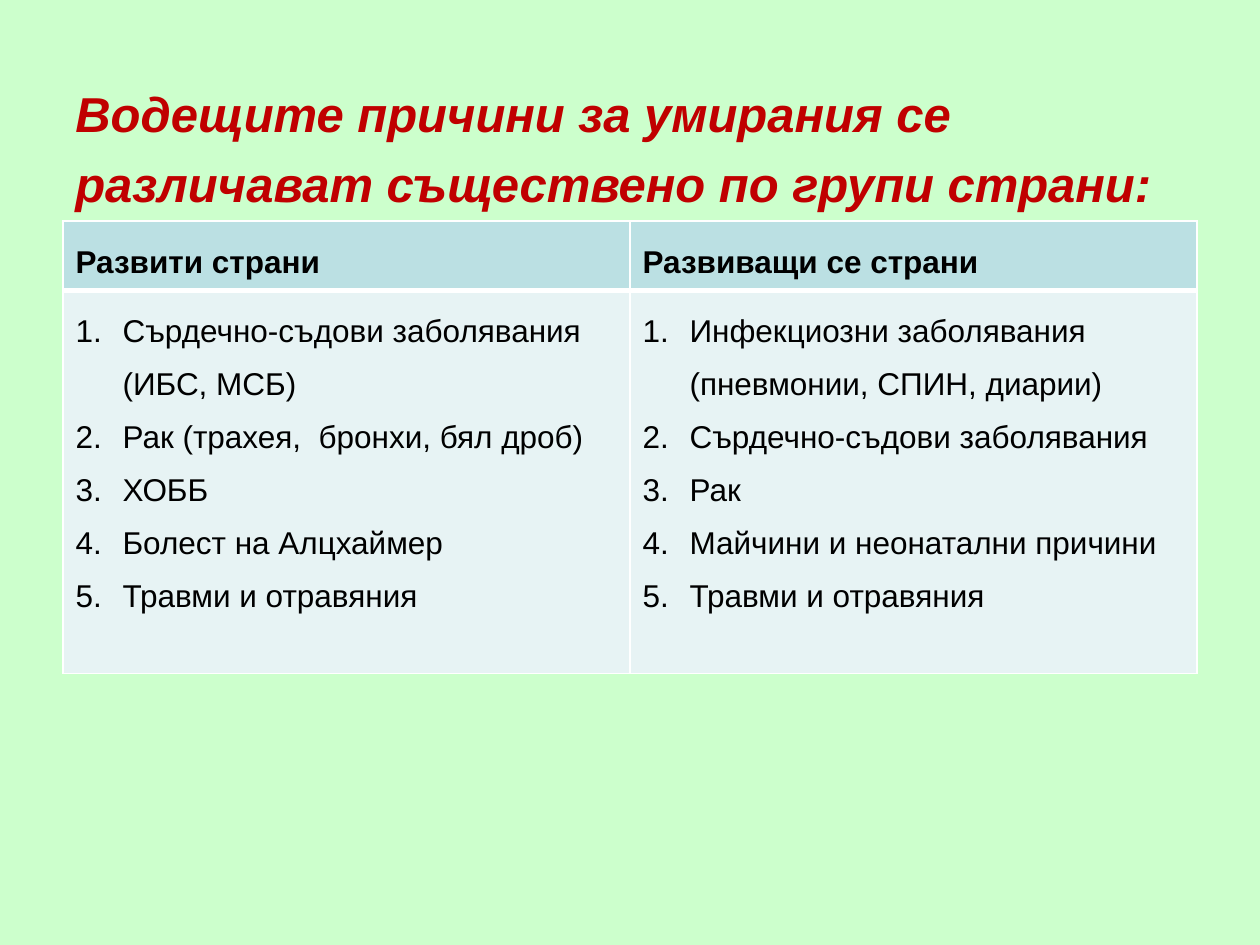
from lxml import etree
from pptx import Presentation
from pptx.dml.color import RGBColor
from pptx.enum import text
from pptx.oxml import ns
from pptx.util import Emu, Pt

EMU_PER_PX = 914400 / 126
MINT = RGBColor(0xCC, 0xFF, 0xCC)
RED = RGBColor(0xC0, 0x00, 0x00)
BLACK = RGBColor(0x00, 0x00, 0x00)
WHITE = RGBColor(0xFF, 0xFF, 0xFF)
TEAL = RGBColor(0xBB, 0xE0, 0xE3)
PALE_TEAL = RGBColor(0xE7, 0xF3, 0xF4)

TITLE = "Водещите причини за умирания се различават съществено по групи страни:"
CAUSES = {
    "Развити страни": [
        "Сърдечно-съдови заболявания (ИБС, МСБ)",
        "Рак (трахея,  бронхи, бял дроб)",
        "ХОББ",
        "Болест на Алцхаймер",
        "Травми и отравяния",
    ],
    "Развиващи се страни": [
        "Инфекциозни заболявания (пневмонии, СПИН, диарии)",
        "Сърдечно-съдови заболявания",
        "Рак",
        "Майчини и неонатални причини",
        "Травми и отравяния",
    ],
}


def px(value):
    return Emu(round(value * EMU_PER_PX))


class SlideBuilder:
    font = "Arial"
    list_indent = 47

    def __init__(self, slide):
        self.slide = slide

    def background(self, color):
        fill = self.slide.background.fill
        fill.solid()
        fill.fore_color.rgb = color

    def add_words(self, paragraph, words, size, color, spacing, bold=False, italic=False):
        paragraph.alignment = text.PP_ALIGN.LEFT
        paragraph.line_spacing = spacing
        run = paragraph.add_run()
        run.text = words
        font = run.font
        font.name, font.size, font.bold, font.italic = self.font, Pt(size), bold, italic
        font.color.rgb = color

    def title(self, words, left, top, width, height):
        box = self.slide.shapes.add_textbox(px(left), px(top), px(width), px(height))
        frame = box.text_frame
        frame.word_wrap = True
        frame.vertical_anchor = text.MSO_ANCHOR.MIDDLE
        self.add_words(frame.paragraphs[0], words, 28, RED, 1.2, bold=True, italic=True)

    def number(self, paragraph):
        properties = paragraph._p.get_or_add_pPr()
        properties.set("marL", str(px(self.list_indent)))
        properties.set("indent", str(-px(self.list_indent)))
        etree.SubElement(properties, ns.qn("a:buFont"), typeface="+mj-lt")
        etree.SubElement(properties, ns.qn("a:buAutoNum"), type="arabicPeriod")

    def cell(self, cell, lines, fill, borders, header=False):
        frame = cell.text_frame
        for index, words in enumerate(lines):
            paragraph = frame.add_paragraph() if index else frame.paragraphs[0]
            self.add_words(paragraph, words, 18, BLACK, 1.5, bold=header)
            if not header:
                self.number(paragraph)
        # Borders come before the fill in the cell properties
        properties = cell._tc.get_or_add_tcPr()
        for side, points in zip("LRTB", borders):
            line = etree.SubElement(properties, ns.qn(f"a:ln{side}"), w=str(Pt(points)))
            solid = etree.SubElement(line, ns.qn("a:solidFill"))
            etree.SubElement(solid, ns.qn("a:srgbClr"), val=str(WHITE))
        cell.fill.solid()
        cell.fill.fore_color.rgb = fill

    def table(self, columns, left, top, width, row_heights):
        frame = self.slide.shapes.add_table(
            len(row_heights), len(columns), px(left), px(top), px(width), px(sum(row_heights)))
        table = frame.table
        for row, height in zip(table.rows, row_heights):
            row.height = px(height)
        for index, (heading, items) in enumerate(columns.items()):
            table.columns[index].width = px(width / len(columns))
            self.cell(table.cell(0, index), [heading], TEAL, (1, 1, 1, 3), header=True)
            self.cell(table.cell(1, index), items, PALE_TEAL, (1, 1, 3, 1))


def main():
    presentation = Presentation()
    presentation.slide_width, presentation.slide_height = px(1260), px(945)
    builder = SlideBuilder(presentation.slides.add_slide(presentation.slide_layouts[6]))

    # Background and title
    builder.background(MINT)
    builder.title(TITLE, 63, 63, 1134, 158)

    # Leading causes by group of countries
    builder.table(CAUSES, 63, 221, 1134, (65, 383))

    presentation.save("out.pptx")


if __name__ == "__main__":
    main()
